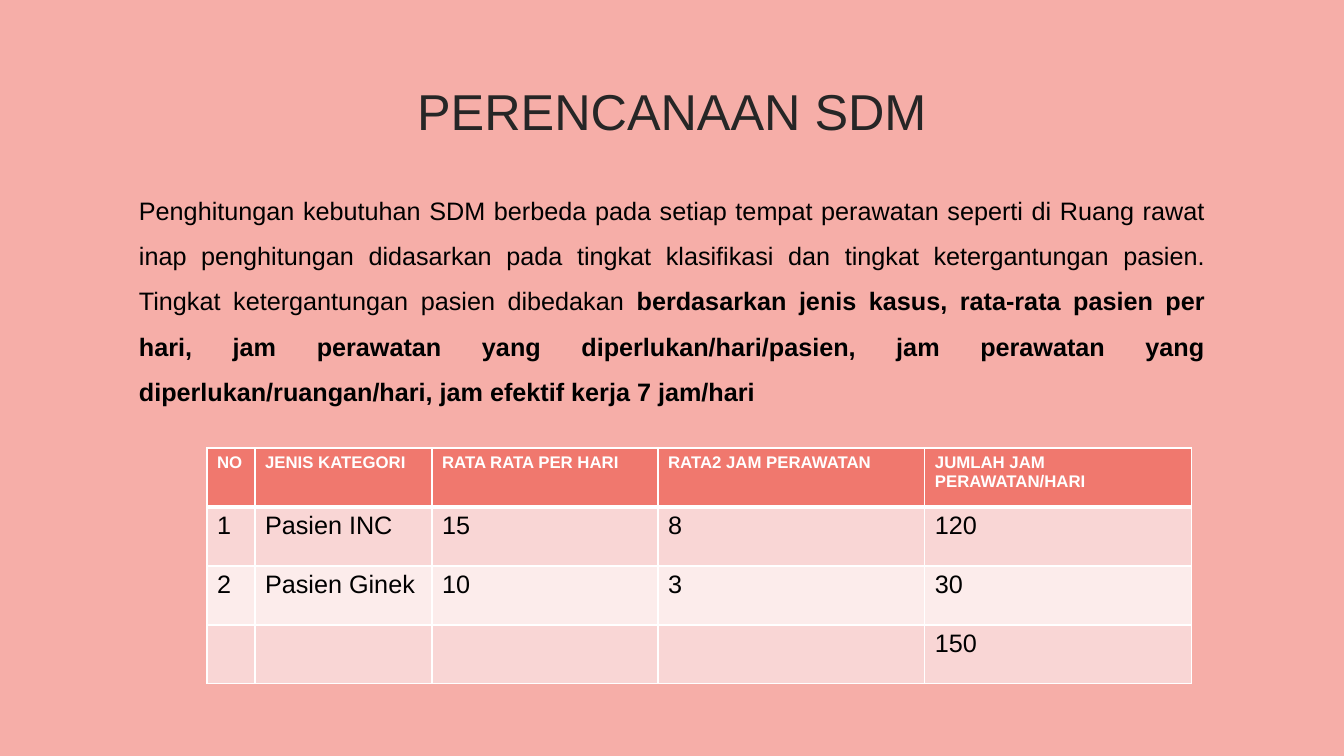
from lxml import etree
from pptx import Presentation
from pptx.dml.color import RGBColor
from pptx.enum.text import MSO_ANCHOR, PP_ALIGN
from pptx.oxml.ns import qn
from pptx.util import Emu, Pt

EMU_PER_PX = 914400 / 100.8
FONT = "Arial"
CENTER, JUSTIFY = PP_ALIGN.CENTER, PP_ALIGN.JUSTIFY
TOP, MIDDLE = MSO_ANCHOR.TOP, MSO_ANCHOR.MIDDLE

PINK = RGBColor(0xF6, 0xAE, 0xA8)
CORAL = RGBColor(0xF0, 0x78, 0x6E)
ROSE = RGBColor(0xF9, 0xD6, 0xD5)
PALE_ROSE = RGBColor(0xFC, 0xEC, 0xEB)
CHARCOAL = RGBColor(0x26, 0x26, 0x26)
BLACK = RGBColor(0, 0, 0)
WHITE = RGBColor(0xFF, 0xFF, 0xFF)

TITLE = "PERENCANAAN SDM"
EXPLANATION = (
    "Penghitungan kebutuhan SDM berbeda pada setiap tempat perawatan seperti "
    "di Ruang rawat inap penghitungan didasarkan pada tingkat klasifikasi dan "
    "tingkat ketergantungan pasien. Tingkat ketergantungan pasien dibedakan "
)
CRITERIA = (
    "berdasarkan jenis kasus, rata-rata pasien per hari, jam perawatan yang "
    "diperlukan/hari/pasien, jam perawatan yang diperlukan/ruangan/hari, jam "
    "efektif kerja 7 jam/hari"
)
COLUMN_WIDTHS = [48, 177, 226, 267, 267]
ROW_HEIGHT = 59
CARE_HOURS = [
    ["NO", "JENIS KATEGORI", "RATA RATA PER HARI", "RATA2 JAM PERAWATAN",
     "JUMLAH JAM PERAWATAN/HARI"],
    ["1", "Pasien INC", "15", "8", "120"],
    ["2", "Pasien Ginek", "10", "3", "30"],
    ["", "", "", "", "150"],
]


def px(length):
    return Emu(round(length * EMU_PER_PX))


def style_font(font, size, color, bold=False):
    font.name = FONT
    font.size = Pt(size)
    font.bold = bold
    font.color.rgb = color


def add_text(slide, box, runs, size, color, align, spacing, anchor=TOP):
    """Add one paragraph made of (text, bold) runs and return it."""
    frame = slide.shapes.add_textbox(*map(px, box)).text_frame
    frame.word_wrap = True
    frame.vertical_anchor = anchor
    paragraph = frame.paragraphs[0]
    paragraph.alignment = align
    paragraph.line_spacing = spacing
    for text, bold in runs:
        run = paragraph.add_run()
        run.text = text
        style_font(run.font, size, color, bold)
    return paragraph


def add_border(cell, side, width):
    line = etree.SubElement(cell._tc.get_or_add_tcPr(), qn(f"a:ln{side}"),
                            w=str(Pt(width)))
    fill = etree.SubElement(line, qn("a:solidFill"))
    etree.SubElement(fill, qn("a:srgbClr"), val=str(WHITE))


def fill_cell(cell, text, row):
    is_header = row == 0
    widths = {"L": 1, "R": 1, "T": 3 if row == 1 else 1, "B": 3 if is_header else 1}
    for side, width in widths.items():
        add_border(cell, side, width)
    cell.fill.solid()
    cell.fill.fore_color.rgb = CORAL if is_header else ROSE if row % 2 else PALE_ROSE
    cell.text = text
    style_font(cell.text_frame.paragraphs[0].font if not text
               else cell.text_frame.paragraphs[0].runs[0].font,
               12 if is_header else 18, WHITE if is_header else BLACK, is_header)


def add_care_table(slide, left, top):
    table = slide.shapes.add_table(
        len(CARE_HOURS), len(COLUMN_WIDTHS), px(left), px(top),
        px(sum(COLUMN_WIDTHS)), px(ROW_HEIGHT * len(CARE_HOURS))).table
    table.first_row = table.horz_banding = False
    for column, width in zip(table.columns, COLUMN_WIDTHS):
        column.width = px(width)
    for row, texts in enumerate(CARE_HOURS):
        table.rows[row].height = px(ROW_HEIGHT)
        for column, text in enumerate(texts):
            fill_cell(table.cell(row, column), text, row)


def main():
    prs = Presentation()
    prs.slide_width, prs.slide_height = px(1344), px(756)
    slide = prs.slides.add_slide(prs.slide_layouts[6])
    slide.background.fill.solid()
    slide.background.fill.fore_color.rgb = PINK

    title = add_text(slide, (34, 74, 1276, 80), [(TITLE, False)], 36, CHARCOAL,
                     CENTER, 0.9, MIDDLE)
    title.space_before = Pt(10)
    add_text(slide, (129, 175, 1086, 234), [(EXPLANATION, False), (CRITERIA, True)],
             18, BLACK, JUSTIFY, 1.5)
    add_care_table(slide, 207, 448)
    prs.save("out.pptx")


if __name__ == "__main__":
    main()
